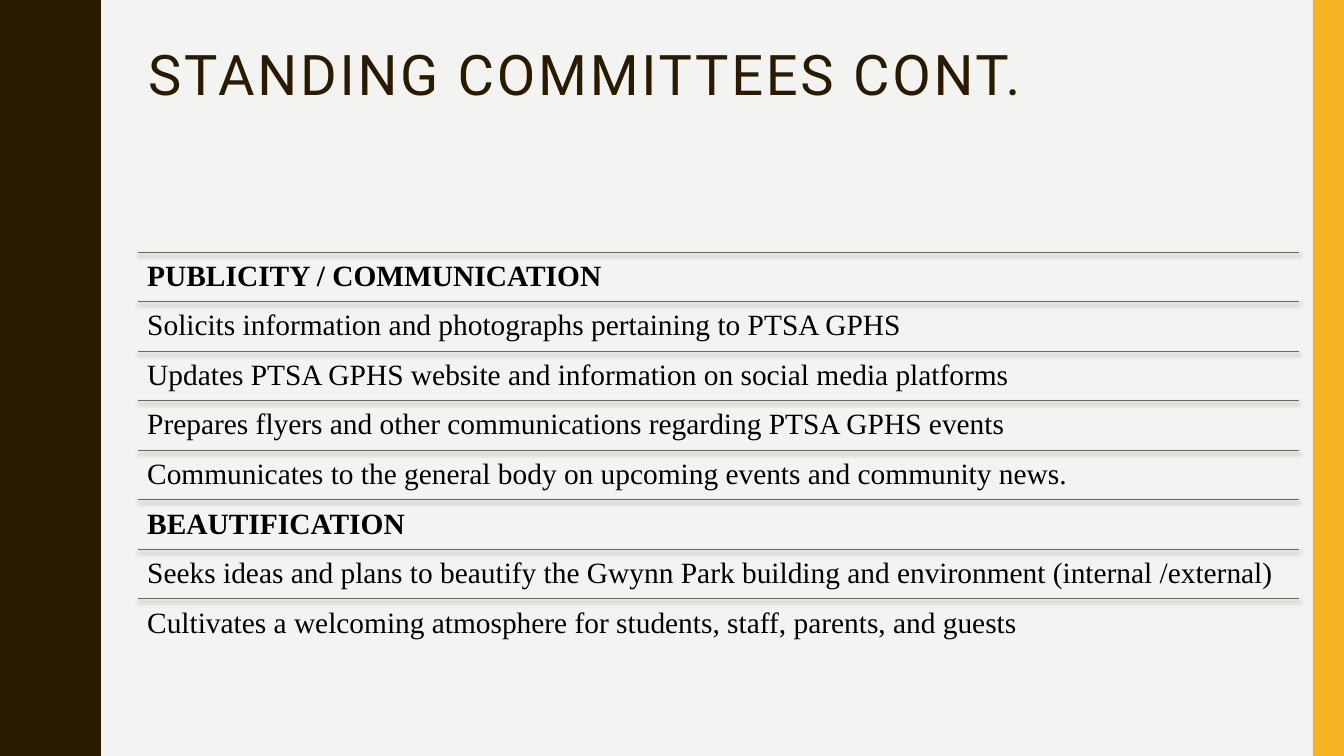
from lxml.etree import SubElement
from pptx import Presentation
from pptx.dml.color import RGBColor
from pptx.enum.shapes import MSO_CONNECTOR, MSO_SHAPE
from pptx.enum.text import MSO_ANCHOR, MSO_AUTO_SIZE, PP_ALIGN
from pptx.oxml.ns import qn
from pptx.util import Inches, Pt

TITLE = "STANDING COMMITTEES CONT."
COMMITTEES = {
    "PUBLICITY / COMMUNICATION": [
        "Solicits information and photographs pertaining to PTSA GPHS",
        "Updates PTSA GPHS website and information on social media platforms",
        "Prepares flyers and other communications regarding PTSA GPHS events",
        "Communicates to the general body on upcoming events and community news.",
    ],
    "BEAUTIFICATION": [
        "Seeks ideas and plans to beautify the Gwynn Park building and environment (internal /external)",
        "Cultivates a welcoming atmosphere for students, staff, parents, and guests",
    ],
}
COLORS = {
    "background": "F3F3F2",
    "wave": "2A1A00",
    "band": "F8B323",
    "title": "2A1A00",
    "rule": "656A59",
    "text": "000000",
}
SLIDE_WIDTH, SLIDE_HEIGHT = 13.33, 7.5
LEFT, WIDTH = 1.37, 11.51
LIST_TOP, LIST_HEIGHT = 2.5, 3.93
BAND_WIDTH = 0.31
TEXT_INSET = 0.09

# First half of one wave, as (x, y); the second half mirrors it.
WAVE_PERIOD, WAVE_COUNT = 1.5, 5
HALF_WAVE = [
    (0.78, 0), (0.78, 0.07), (0.79, 0.14), (0.8, 0.2), (0.81, 0.25),
    (0.83, 0.29), (0.85, 0.33), (0.87, 0.38), (0.89, 0.42), (0.91, 0.46),
    (0.93, 0.5), (0.95, 0.55), (0.96, 0.61), (0.97, 0.68), (0.97, 0.75),
]


def color(name):
    return RGBColor.from_string(COLORS[name])


def paint(shape, name):
    shape.shadow.inherit = False
    shape.fill.solid()
    shape.fill.fore_color.rgb = color(name)
    shape.line.fill.background()


def add_wave(slide):
    period = HALF_WAVE + [(x, WAVE_PERIOD - y) for x, y in HALF_WAVE[-2:0:-1]]
    edge = [(x, y + i * WAVE_PERIOD) for i in range(WAVE_COUNT) for x, y in period]
    edge += [(HALF_WAVE[0][0], SLIDE_HEIGHT), (0, SLIDE_HEIGHT)]
    builder = slide.shapes.build_freeform(0, 0, scale=Inches(1))
    builder.add_line_segments(edge, close=True)
    paint(builder.convert_to_shape(), "wave")


def add_band(slide):
    band = slide.shapes.add_shape(
        MSO_SHAPE.RECTANGLE, Inches(SLIDE_WIDTH - BAND_WIDTH), 0,
        Inches(BAND_WIDTH), Inches(SLIDE_HEIGHT))
    paint(band, "band")


def add_title(slide):
    title = slide.shapes.title
    title.left, title.top = Inches(LEFT), Inches(0.42)
    title.width, title.height = Inches(WIDTH), Inches(1.97)
    frame = title.text_frame
    frame.text = TITLE
    frame.auto_size = MSO_AUTO_SIZE.NONE
    frame.vertical_anchor = MSO_ANCHOR.TOP
    paragraph = frame.paragraphs[0]
    paragraph.alignment = PP_ALIGN.LEFT
    paragraph.line_spacing = 0.9
    font = paragraph.runs[0].font
    font.name, font.size = "Roboto", Pt(40)
    font.color.rgb = color("title")
    paragraph.runs[0]._r.get_or_add_rPr().set("spc", "200")


def add_rule(slide, top):
    rule = slide.shapes.add_connector(
        MSO_CONNECTOR.STRAIGHT, Inches(LEFT), Inches(top),
        Inches(LEFT + WIDTH), Inches(top))
    rule.line.color.rgb = color("rule")
    rule.line.width = Pt(0.5)
    effects = SubElement(rule._element.spPr, qn("a:effectLst"))
    shadow = SubElement(effects, qn("a:outerShdw"), blurRad=str(Pt(3)),
                        dist=str(Pt(2)), dir="5400000", rotWithShape="0")
    tint = SubElement(shadow, qn("a:srgbClr"), val="000000")
    SubElement(tint, qn("a:alpha"), val="25000")


def add_row_text(slide, top, height, text, bold):
    box = slide.shapes.add_textbox(
        Inches(LEFT), Inches(top), Inches(WIDTH), Inches(height))
    frame = box.text_frame
    frame.word_wrap = True
    frame.margin_left = frame.margin_right = Inches(TEXT_INSET)
    frame.margin_top = frame.margin_bottom = Inches(TEXT_INSET)
    paragraph = frame.paragraphs[0]
    paragraph.text = text
    paragraph.line_spacing = 0.9
    font = paragraph.font
    font.name, font.size, font.bold = "Times New Roman", Pt(21), bold
    font.color.rgb = color("text")


def add_committees(slide):
    rows = []
    for committee, duties in COMMITTEES.items():
        rows.append((committee, True))
        rows += [(duty, False) for duty in duties]
    height = LIST_HEIGHT / len(rows)
    for i, (text, bold) in enumerate(rows):
        top = LIST_TOP + i * height
        add_rule(slide, top)
        add_row_text(slide, top, height, text, bold)


def main():
    presentation = Presentation()
    presentation.slide_width = Inches(SLIDE_WIDTH)
    presentation.slide_height = Inches(SLIDE_HEIGHT)
    slide = presentation.slides.add_slide(presentation.slide_layouts[5])
    slide.background.fill.solid()
    slide.background.fill.fore_color.rgb = color("background")
    add_wave(slide)
    add_band(slide)
    add_title(slide)
    add_committees(slide)
    presentation.save("out.pptx")


if __name__ == "__main__":
    main()
